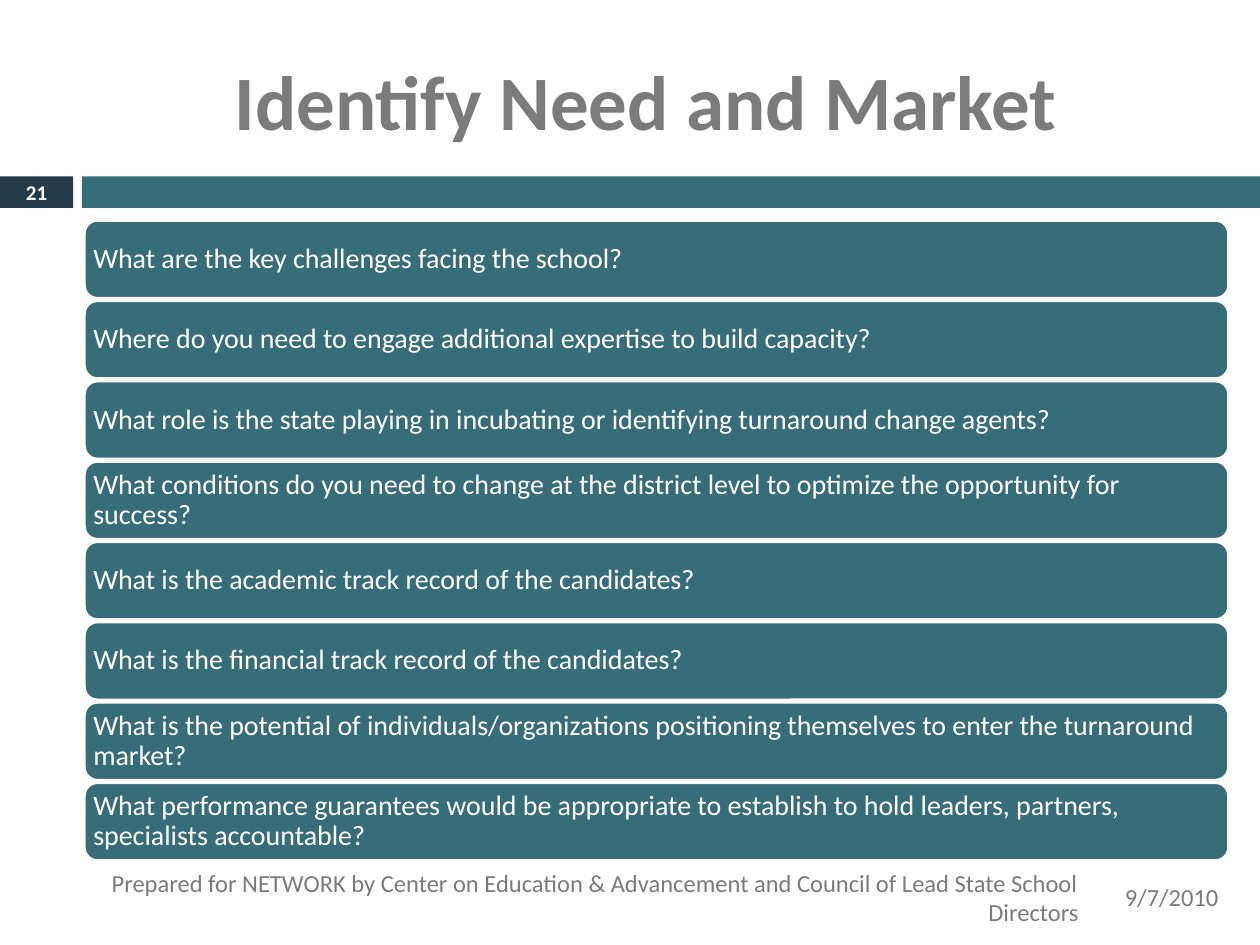
from pptx import Presentation
from pptx import util as u
from pptx.dml.color import RGBColor
from pptx.enum import shapes, text

TITLE = "Identify Need and Market"
NUMBER = "21"
DATE = "9/7/2010"
FOOTER = ("Prepared for NETWORK by Center on Education & Advancement "
          "and Council of Lead State School Directors")
QUESTIONS = [
    "What are the key challenges facing the school?",
    "Where do you need to engage additional expertise to build capacity?",
    "What role is the state playing in incubating or identifying turnaround change agents?",
    "What conditions do you need to change at the district level to optimize the opportunity for success?",
    "What is the academic track record of the candidates?",
    "What is the financial track record of the candidates?",
    "What is the potential of individuals/organizations positioning themselves to enter the turnaround market?",
    "What performance guarantees would be appropriate to establish to hold leaders, partners, specialists accountable?",
]

THEME = {
    "font": "Calibri",
    "teal": "376C79", "navy": "233B49", "gray": "7B7B7B", "white": "FFFFFF",
    "title": 44, "body": 16, "footer": 14, "number": 12,
}
W, H = 10, 7.5
BAND_TOP, BAND_H = 1.4, 0.25
NUMBER_W, BAND_LEFT = 0.58, 0.65
LEFT, LIST_W = 0.67, 9.08
LIST_TOP, LIST_BOTTOM, GAP = 1.75, 6.83, 0.02
ROW_H = (LIST_BOTTOM - LIST_TOP + GAP) / len(QUESTIONS) - GAP
FOOT_TOP, FOOT_H = 6.92, 0.4

prs = Presentation()
prs.slide_width, prs.slide_height = u.Inches(W), u.Inches(H)
s = prs.slides.add_slide(prs.slide_layouts[6])


def color(name):
    return RGBColor.from_string(THEME[name])


def add_box(kind, box, fill, line=None):
    sp = s.shapes.add_shape(kind, *map(u.Inches, box))
    sp.shadow.inherit = False
    sp.fill.solid()
    sp.fill.fore_color.rgb = color(fill)
    if line:
        sp.line.color.rgb = color(line)
        sp.line.width = u.Pt(1.5)
    else:
        sp.line.fill.background()
    return sp


def add_text(content, box=None, sp=None, size="body", ink="white", bold=False,
             align="LEFT", inset=(0.1, 0.05), spacing=None):
    sp = sp or s.shapes.add_textbox(*map(u.Inches, box))
    tf = sp.text_frame
    tf.word_wrap = True
    tf.vertical_anchor = text.MSO_ANCHOR.MIDDLE
    tf.margin_left = tf.margin_right = u.Inches(inset[0])
    tf.margin_top = tf.margin_bottom = u.Inches(inset[1])
    p = tf.paragraphs[0]
    p.alignment = getattr(text.PP_ALIGN, align)
    if spacing:
        p.line_spacing = spacing
    r = p.add_run()
    r.text = content
    r.font.name = THEME["font"]
    r.font.size = u.Pt(THEME[size])
    r.font.bold = bold
    r.font.color.rgb = color(ink)


RECT = shapes.MSO_SHAPE.RECTANGLE
number_box = add_box(RECT, (0, BAND_TOP, NUMBER_W, BAND_H), "navy")
add_box(RECT, (BAND_LEFT, BAND_TOP, W - BAND_LEFT, BAND_H), "teal")
add_text(TITLE, (LEFT, 0.25, 8.92, 1.08), size="title", ink="gray", bold=True, align="CENTER")

for i, question in enumerate(QUESTIONS):
    top = LIST_TOP + i * (ROW_H + GAP)
    sp = add_box(shapes.MSO_SHAPE.ROUNDED_RECTANGLE, (LEFT, top, LIST_W, ROW_H), "teal", "white")
    add_text(question, sp=sp, inset=(0.04, 0.04), spacing=0.9)

add_text(DATE, (8.83, FOOT_TOP, W - 8.83, FOOT_H), size="footer", ink="gray")
add_text(FOOTER, (0.33, FOOT_TOP, 8.33, FOOT_H), size="footer", ink="gray", align="RIGHT")
add_text(NUMBER, sp=number_box, size="number", bold=True, align="CENTER", inset=(0.1, 0))

prs.save("out.pptx")
